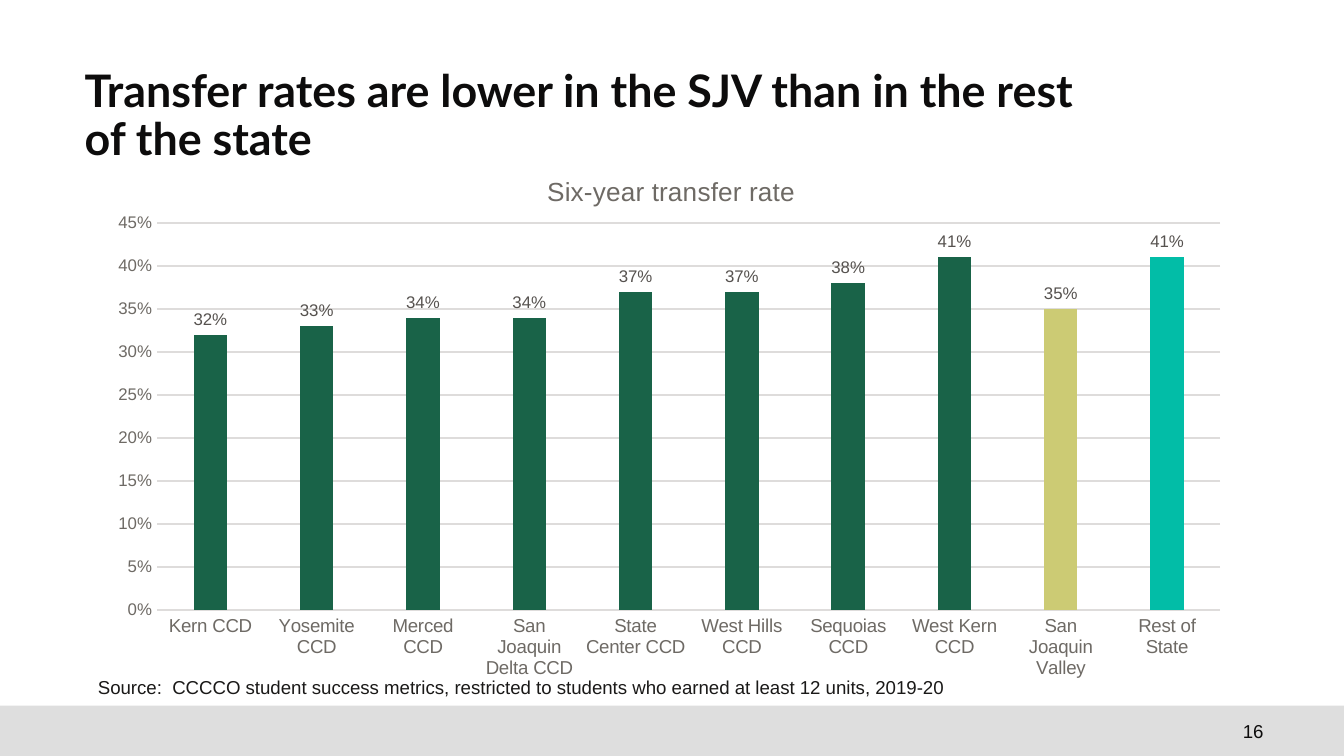
from lxml import etree
from pptx import Presentation
from pptx.chart.data import CategoryChartData
from pptx.dml.color import RGBColor
from pptx.enum.chart import XL_CHART_TYPE, XL_LABEL_POSITION, XL_TICK_MARK
from pptx.enum.shapes import MSO_SHAPE
from pptx.enum.text import MSO_ANCHOR, PP_ALIGN
from pptx.oxml import parse_xml
from pptx.oxml.ns import nsdecls
from pptx.util import Inches, Pt

COLUMN = XL_CHART_TYPE.COLUMN_CLUSTERED
OUTSIDE = XL_LABEL_POSITION.OUTSIDE_END
NO_TICK = XL_TICK_MARK.NONE
RECT = MSO_SHAPE.RECTANGLE
TOP, MIDDLE = MSO_ANCHOR.TOP, MSO_ANCHOR.MIDDLE
LEFT, RIGHT = PP_ALIGN.LEFT, PP_ALIGN.RIGHT

TITLE = "Transfer rates are lower in the SJV than in the rest of the state"
CHART_TITLE = "Six-year transfer rate"
SOURCE = ("Source:  CCCCO student success metrics, restricted to students "
          "who earned at least 12 units, 2019-20")
PAGE = "16"
# district, transfer rate, bar colour
RATES = [
    ("Kern CCD", 0.32, "green"),
    ("Yosemite CCD", 0.33, "green"),
    ("Merced CCD", 0.34, "green"),
    ("San Joaquin Delta CCD", 0.34, "green"),
    ("State Center CCD", 0.37, "green"),
    ("West Hills CCD", 0.37, "green"),
    ("Sequoias CCD", 0.38, "green"),
    ("West Kern CCD", 0.41, "green"),
    ("San Joaquin Valley", 0.35, "olive"),
    ("Rest of State", 0.41, "teal"),
]
COLORS = {
    "black": "0D0C0C", "text": "1A1918", "axis": "6E6A65", "label": "56524F",
    "grid": "DEDCDB", "footer": "DEDEDE",
    "green": "196348", "olive": "CCCB74", "teal": "02BDA7",
}
WIDTH = 10
HEIGHT = WIDTH * 9 / 16
MARGIN = 0.63
FOOTER_TOP = 5.25
FOOTER_H = HEIGHT - FOOTER_TOP
CHART_W, CHART_H = 8.51, 3.98
PLOT = {"x": 0.43 / CHART_W, "y": 0.53 / CHART_H,
        "w": 7.91 / CHART_W, "h": 2.88 / CHART_H}


def rgb(name):
    return RGBColor.from_string(COLORS[name])


def box(*sides):
    return [Inches(v) for v in sides]


def style(font, size, color, name="Arial", bold=False):
    font.size, font.name, font.bold = Pt(size), name, bold
    font.color.rgb = rgb(color)


def add_text(slide, at, text, size, color, name="Arial", bold=False,
             align=LEFT, anchor=TOP, wrap=True, inset=True, spacing=None):
    tf = slide.shapes.add_textbox(*box(*at)).text_frame
    tf.word_wrap, tf.vertical_anchor = wrap, anchor
    if not inset:
        tf.margin_left = tf.margin_right = tf.margin_top = tf.margin_bottom = 0
    p = tf.paragraphs[0]
    p.alignment = align
    if spacing:
        p.line_spacing = spacing
    r = p.add_run()
    r.text = text
    style(r.font, size, color, name, bold)


def set_plot_area(chart):
    """Fix the inner plot area as shares of the chart."""
    area = chart._chartSpace.chart.plotArea
    for old in area.findall("{*}layout"):
        area.remove(old)
    layout = parse_xml(f"<c:layout {nsdecls('c')}><c:manualLayout/></c:layout>")
    ns = "{%s}" % layout.nsmap["c"]
    settings = [("layoutTarget", "inner"), ("xMode", "edge"), ("yMode", "edge")]
    for tag, value in settings + list(PLOT.items()):
        etree.SubElement(layout[0], ns + tag).set("val", str(value))
    area.insert(0, layout)


def add_rates_chart(slide):
    data = CategoryChartData(number_format="0%")
    data.categories = [name for name, _, _ in RATES]
    data.add_series("Series 1", [rate for _, rate, _ in RATES])
    at = box(0.74, 1.13, CHART_W, CHART_H)
    chart = slide.shapes.add_chart(COLUMN, *at, data).chart
    style(chart.font, 10, "text")
    chart.has_legend = False
    chart.has_title = True
    r = chart.chart_title.text_frame.paragraphs[0].add_run()
    r.text = CHART_TITLE
    style(r.font, 14, "axis")
    set_plot_area(chart)

    cats, vals = chart.category_axis, chart.value_axis
    for axis, size in ((cats, 10), (vals, 9)):
        axis.major_tick_mark = axis.minor_tick_mark = NO_TICK
        style(axis.tick_labels.font, size, "axis")
    vals.minimum_scale, vals.maximum_scale, vals.major_unit = 0, 0.45, 0.05
    vals.tick_labels.number_format = "0%"
    vals.tick_labels.number_format_is_linked = False
    vals.format.line.fill.background()
    for line in (cats.format.line, vals.major_gridlines.format.line):
        line.color.rgb, line.width = rgb("grid"), Pt(0.75)

    plot = chart.plots[0]
    plot.gap_width, plot.overlap, plot.vary_by_categories = 219, -27, False
    series = plot.series[0]
    series.invert_if_negative = False
    series.format.fill.solid()
    series.format.fill.fore_color.rgb = rgb("green")
    for i, (_, _, color) in enumerate(RATES):
        if color != "green":
            fill = series.points[i].format.fill
            fill.solid()
            fill.fore_color.rgb = rgb(color)
    labels = series.data_labels
    labels.show_value, labels.position = True, OUTSIDE
    labels.number_format, labels.number_format_is_linked = "0%", False
    style(labels.font, 9, "label")


def main():
    prs = Presentation()
    prs.slide_width, prs.slide_height = box(WIDTH, HEIGHT)
    slide = prs.slides.add_slide(prs.slide_layouts[6])

    footer = slide.shapes.add_shape(RECT, *box(0, FOOTER_TOP, WIDTH, FOOTER_H))
    footer.shadow.inherit = False
    footer.fill.solid()
    footer.fill.fore_color.rgb = rgb("footer")
    footer.line.fill.background()

    add_text(slide, (7.17, FOOTER_TOP, 2.33, FOOTER_H), PAGE, 10, "black",
             align=RIGHT, anchor=MIDDLE)
    add_text(slide, (MARGIN, 0.51, 7.37, 0.8), TITLE, 24, "black", "Lato",
             bold=True, inset=False, spacing=0.9)
    add_rates_chart(slide)
    add_text(slide, (MARGIN, 4.98, 6.58, 0.27), SOURCE, 10, "text", wrap=False)
    prs.save("out.pptx")


if __name__ == "__main__":
    main()
